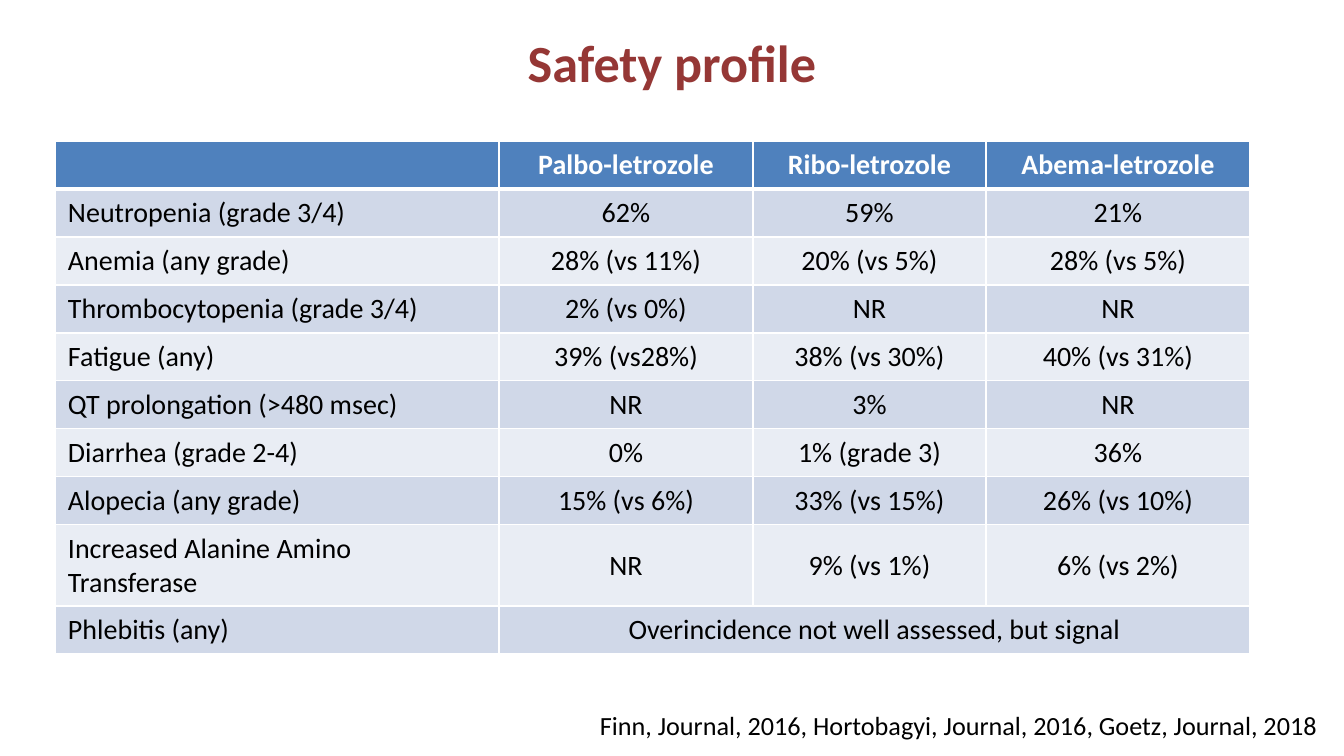
import pptx
import pptx.util
import pptx.dml.color
import pptx.enum.text
import lxml.etree

# Content
TITLE = "Safety profile"
SOURCES = "Finn, Journal, 2016, Hortobagyi, Journal, 2016, Goetz, Journal, 2018"
ROWS = [
    ("", "Palbo-letrozole", "Ribo-letrozole", "Abema-letrozole"),
    ("Neutropenia (grade 3/4)", "62%", "59%", "21%"),
    ("Anemia (any grade)", "28% (vs 11%)", "20% (vs 5%)", "28% (vs 5%)"),
    ("Thrombocytopenia (grade 3/4)", "2% (vs 0%)", "NR", "NR"),
    ("Fatigue (any)", "39% (vs28%)", "38% (vs 30%)", "40% (vs 31%)"),
    ("QT prolongation (>480 msec)", "NR", "3%", "NR"),
    ("Diarrhea (grade 2-4)", "0%", "1% (grade 3)", "36%"),
    ("Alopecia (any grade)", "15% (vs 6%)", "33% (vs 15%)", "26% (vs 10%)"),
    ("Increased Alanine Amino Transferase", "NR", "9% (vs 1%)", "6% (vs 2%)"),
    ("Phlebitis (any)", "Overincidence not well assessed, but signal"),
]

# Theme and layout, lengths in px
THEME = {
    "font": "Calibri",
    "title": "953735", "text": "000000", "white": "FFFFFF",
    "header": "4F81BD", "bands": ("E9EDF4", "D0D8E8"),
    "title_size": 37.3, "table_size": 20, "source_size": 18.7,
    "rule": 1, "header_rule": 3,
}
SLIDE_SIZE = (1344, 756)
TITLE_BOX = (0, 11, 1344, 102)
SOURCE_BOX = (590, 704, 754, 42)
TABLE_LEFT, TABLE_TOP = 55, 141
COLUMN_WIDTHS = (444, 254, 233, 264)
ROW_HEIGHT = 48
CELL_MARGIN_X, CELL_MARGIN_Y = 13, 7

ALIGN = pptx.enum.text.PP_ALIGN
ANCHOR = pptx.enum.text.MSO_ANCHOR


def px(length):
    return pptx.util.Emu(round(length * 914400 / 100.8))


def rgb(value):
    return pptx.dml.color.RGBColor.from_string(value)


def write(text_frame, text, size, color, bold, align):
    text_frame.text = text
    paragraph = text_frame.paragraphs[0]
    paragraph.alignment = align
    for run in paragraph.runs:
        run.font.name = THEME["font"]
        run.font.size = pptx.util.Pt(size)
        run.font.bold = bold
        run.font.color.rgb = rgb(color)


def add_text(slide, box, text, size, color, bold, align, wrap):
    shape = slide.shapes.add_textbox(*map(px, box))
    shape.text_frame.word_wrap = wrap
    shape.text_frame.vertical_anchor = ANCHOR.MIDDLE
    write(shape.text_frame, text, size, color, bold, align)


def add_borders(cell, top, bottom):
    properties = cell._tc.get_or_add_tcPr()
    namespace = "{http://schemas.openxmlformats.org/drawingml/2006/main}"
    widths = {"lnL": THEME["rule"], "lnR": THEME["rule"], "lnT": top, "lnB": bottom}
    for side, width in widths.items():
        line = lxml.etree.SubElement(properties, namespace + side, w=str(pptx.util.Pt(width)))
        fill = lxml.etree.SubElement(line, namespace + "solidFill")
        lxml.etree.SubElement(fill, namespace + "srgbClr", val=THEME["white"])


def format_cell(cell, row, column, text):
    is_header = row == 0
    cell.margin_left = cell.margin_right = px(CELL_MARGIN_X)
    cell.margin_top = cell.margin_bottom = px(CELL_MARGIN_Y)
    cell.vertical_anchor = ANCHOR.TOP if is_header else ANCHOR.MIDDLE
    add_borders(cell,
                top=THEME["header_rule"] if row == 1 else THEME["rule"],
                bottom=THEME["header_rule"] if is_header else THEME["rule"])
    cell.fill.solid()
    cell.fill.fore_color.rgb = rgb(THEME["header"] if is_header else THEME["bands"][row % 2])
    if text:
        write(cell.text_frame, text, THEME["table_size"],
              THEME["white"] if is_header else THEME["text"], is_header,
              ALIGN.CENTER if column else ALIGN.LEFT)


def add_safety_table(slide):
    column_count = len(COLUMN_WIDTHS)
    table = slide.shapes.add_table(
        len(ROWS), column_count, px(TABLE_LEFT), px(TABLE_TOP),
        px(sum(COLUMN_WIDTHS)), px(ROW_HEIGHT * len(ROWS))).table
    for column, width in enumerate(COLUMN_WIDTHS):
        table.columns[column].width = px(width)
    for row, texts in enumerate(ROWS):
        table.rows[row].height = px(ROW_HEIGHT)
        for column in range(column_count):
            text = texts[column] if column < len(texts) else ""
            format_cell(table.cell(row, column), row, column, text)
        # A short row stretches its last text to the right edge
        if len(texts) < column_count:
            table.cell(row, len(texts) - 1).merge(table.cell(row, column_count - 1))


def main():
    presentation = pptx.Presentation()
    presentation.slide_width, presentation.slide_height = map(px, SLIDE_SIZE)
    slide = presentation.slides.add_slide(presentation.slide_layouts[6])
    add_text(slide, TITLE_BOX, TITLE, THEME["title_size"], THEME["title"],
             True, ALIGN.CENTER, True)
    add_safety_table(slide)
    add_text(slide, SOURCE_BOX, SOURCES, THEME["source_size"], THEME["text"],
             False, ALIGN.LEFT, False)
    presentation.save("out.pptx")


if __name__ == "__main__":
    main()
